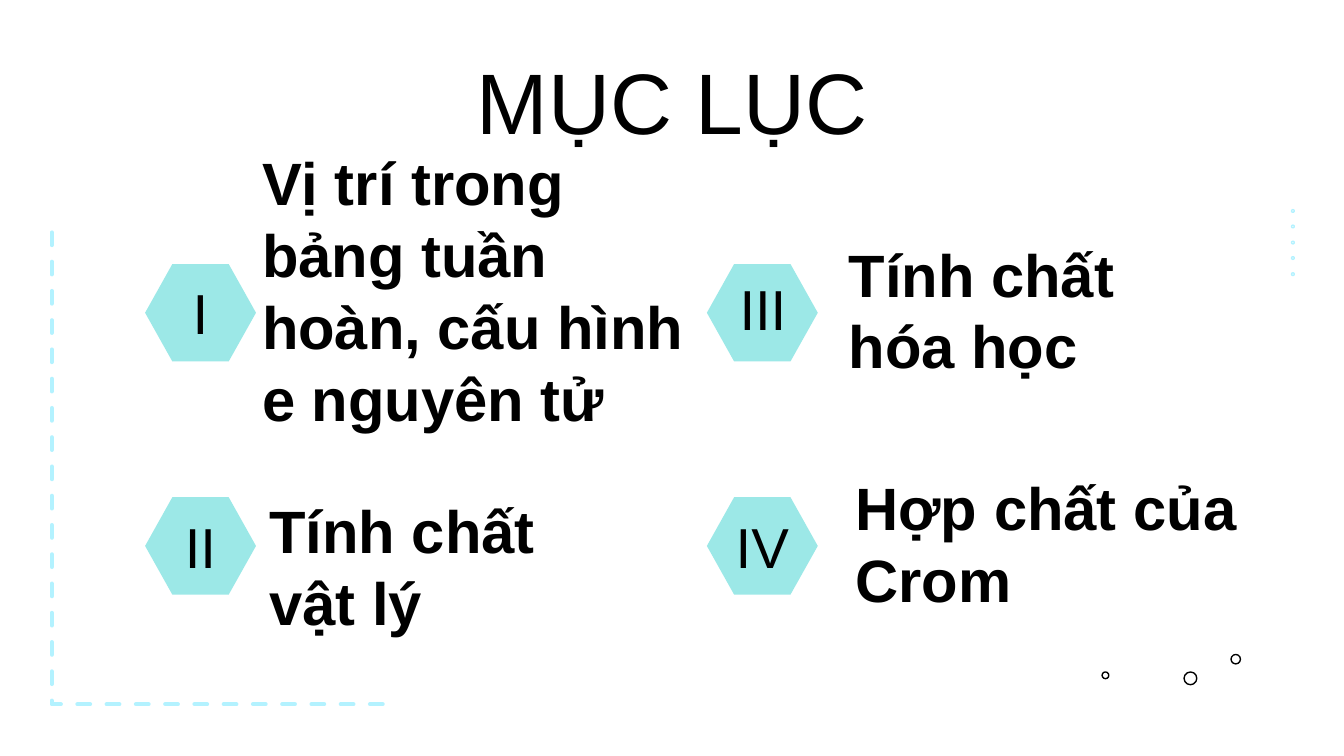
from lxml.etree import SubElement
from pptx import Presentation
from pptx.dml.color import RGBColor
from pptx.enum.dml import MSO_LINE_DASH_STYLE as Dash
from pptx.enum.shapes import MSO_SHAPE as Shape
from pptx.enum.text import MSO_ANCHOR as Anchor, MSO_AUTO_SIZE as AutoSize, PP_ALIGN as Align
from pptx.util import Pt

EMU_PER_PX = 4572
COLORS = {"ink": "000000", "paper": "FFFFFF", "hexagon": "9CE8E7", "accent": "B3F2FF"}
FRAME = {"word_wrap": True, "auto_size": AutoSize.NONE, "vertical_anchor": Anchor.MIDDLE}
HEADING = {"size": Pt(46), "bold": False}
NUMERAL = {"size": Pt(30.2), "bold": False}
ENTRY = {"size": Pt(32), "bold": True}
CENTERED = {"alignment": Align.CENTER, "space_before": Pt(0)}
LISTED = {"alignment": Align.LEFT, "space_before": Pt(0), "space_after": Pt(12),
          "line_spacing": 1.0}
HEXAGON_SIZE = (165, 145)
NUMERAL_SIZE = (165, 86)
CONTENTS = [
    ("I", (216, 393), (216, 422), "Vị trí trong bảng tuần hoàn, cấu hình e nguyên tử", (370, 280, 684, 302)),
    ("II", (216, 740), (216, 770), "Tính chất vật lý", (381, 748, 534, 188)),
    ("III", (1052, 393), (1053, 416), "Tính chất hóa học", (1243, 356, 616, 208)),
    ("IV", (1052, 740), (1052, 770), "Hợp chất của Crom", (1253, 774, 616, 66)),
]
BUBBLES = [(1832, 974, 14), (1762, 1000, 19), (1640, 1000, 10)]


def px(*lengths):
    return [length * EMU_PER_PX for length in lengths]


def color(name):
    return RGBColor.from_string(COLORS[name])


def set_all(target, values):
    for name, value in values.items():
        setattr(target, name, value)


def write(box, text, font, layout):
    frame = box.text_frame
    margins = {f"margin_{side}": px(20)[0] for side in ("left", "right", "top", "bottom")}
    set_all(frame, FRAME | margins)
    para = frame.paragraphs[0]
    properties = para._p.get_or_add_pPr()
    properties.set("marL", "0")
    properties.set("indent", "0")
    set_all(para, layout)
    SubElement(properties, "{http://schemas.openxmlformats.org/drawingml/2006/main}buNone")
    span = para.add_run()
    span.text = text
    set_all(span.font, font | {"name": "Arial"})
    span.font.color.rgb = color("ink")


def fill_placeholder(box, place, text, font, layout):
    set_all(box, dict(zip(("left", "top", "width", "height"), px(*place))))
    write(box, text, font, layout)


def add_numeral(page, place, text):
    box = page.shapes.add_textbox(*px(*place, *NUMERAL_SIZE))
    write(box, text, NUMERAL, CENTERED)


def add_hexagon(page, place):
    hexagon = page.shapes.add_shape(Shape.HEXAGON, *px(*place, *HEXAGON_SIZE))
    hexagon.adjustments[0] = 0.28
    hexagon.shadow.inherit = False
    hexagon.fill.solid()
    hexagon.fill.fore_color.rgb = color("hexagon")
    hexagon.line.fill.background()


def add_circle(page, left, top, size, line, fill=None):
    circle = page.shapes.add_shape(Shape.OVAL, *px(left, top, size, size))
    circle.shadow.inherit = False
    if fill:
        circle.fill.solid()
        circle.fill.fore_color.rgb = color(fill)
    else:
        circle.fill.background()
    circle.line.color.rgb = color(line)
    circle.line.width = Pt(0.75)


def add_dashed_corner(page):
    builder = page.shapes.build_freeform(*px(77, 346), scale=1.0)
    builder.add_line_segments([px(77, 1048), px(584, 1048)], close=False)
    corner = builder.convert_to_shape()
    corner.shadow.inherit = False
    corner.fill.background()
    corner.line.color.rgb = color("accent")
    set_all(corner.line, {"width": Pt(2.25), "dash_style": Dash.DASH})
    corner.line._get_or_add_ln().set("cap", "rnd")


def main():
    deck = Presentation()
    deck.slide_width, deck.slide_height = px(2000, 1125)
    page = deck.slides.add_slide(deck.slide_layouts.get_by_name("Comparison"))
    page.background.fill.solid()
    page.background.fill.fore_color.rgb = color("paper")
    title, *bodies = page.placeholders

    add_dashed_corner(page)
    for row in range(5):
        add_circle(page, 1922, 312 + 47 * row // 2, 4, "accent", "paper")
    fill_placeholder(title, (77, 76, 1846, 146), "MỤC LỤC", HEADING, CENTERED)
    for body, (numeral, hexagon_at, numeral_at, text, place) in zip(bodies, CONTENTS):
        add_hexagon(page, hexagon_at)
        add_numeral(page, numeral_at, numeral)
        fill_placeholder(body, place, text, ENTRY, LISTED)
    for left, top, size in BUBBLES:
        add_circle(page, left, top, size, "ink")
    deck.save("out.pptx")


if __name__ == "__main__":
    main()
